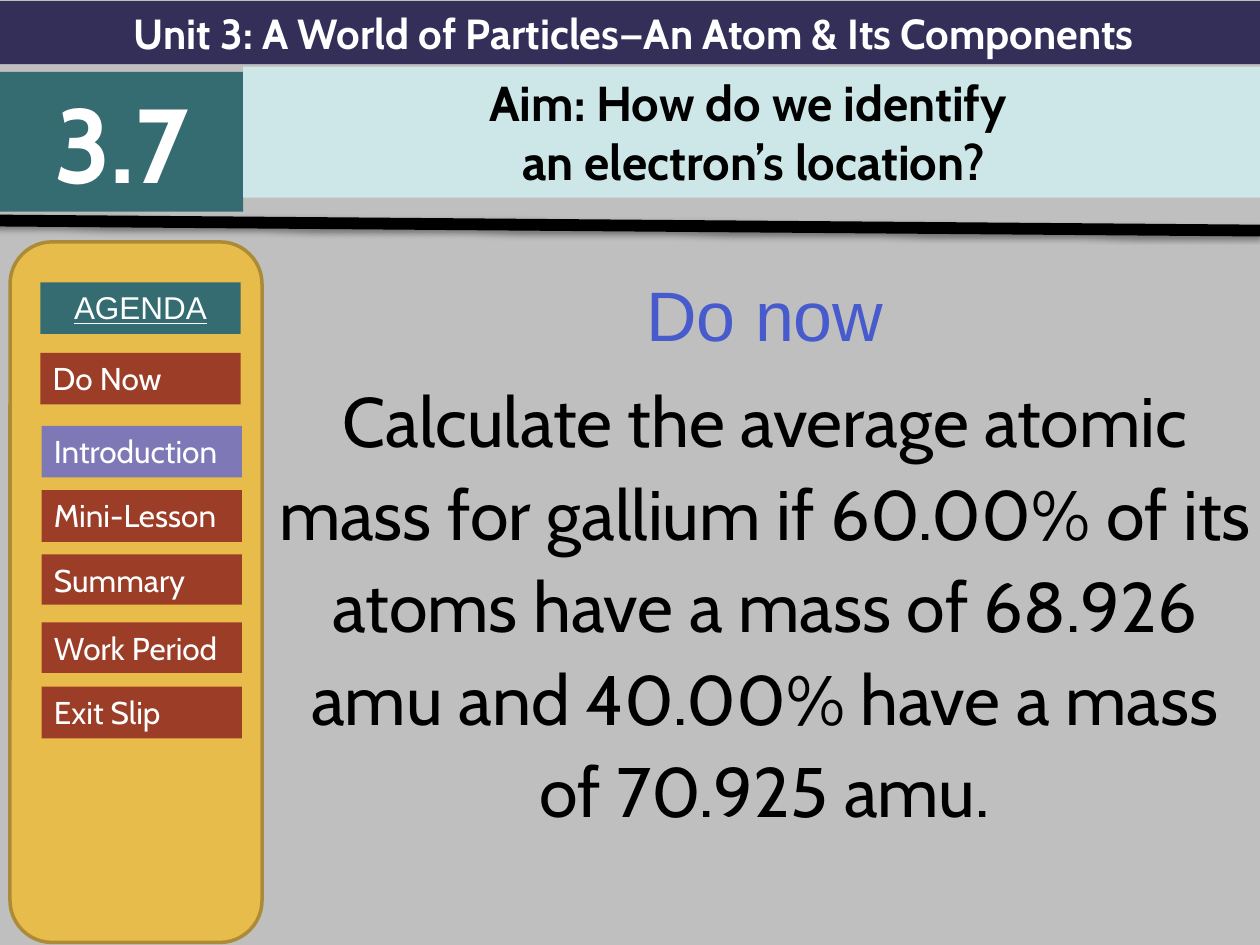
from dataclasses import dataclass
from typing import Any

import pptx
import pptx.dml.color
import pptx.enum.shapes
import pptx.enum.text
import pptx.oxml
import pptx.oxml.ns
import pptx.util

Inches = pptx.util.Inches
Shapes = pptx.enum.shapes.MSO_SHAPE
Align = pptx.enum.text.PP_ALIGN


@dataclass(frozen=True)
class Theme:
    background: str = "BFBFBF"
    navy: str = "342F59"
    teal: str = "346C71"
    pale: str = "CDE6E8"
    gold: str = "E8BC4A"
    gold_edge: str = "AC8B37"
    rust: str = "9C3D28"
    lilac: str = "7E78B7"
    blue: str = "475BCD"
    black: str = "000000"
    white: str = "FFFFFF"
    body_font: str = "Cabin"
    plain_font: str = "Arial"
    agenda_size: float = 18
    unit_size: float = 24
    aim_size: float = 28
    body_size: float = 40
    lesson_size: float = 60


THEME = Theme()


@dataclass(frozen=True)
class TextStyle:
    size: float
    color: str = THEME.white
    font: str = THEME.body_font
    bold: bool = False
    underline: bool = False
    align: Any = Align.CENTER


@dataclass(frozen=True)
class Panel:
    text: str
    left: float
    top: float
    width: float
    height: float
    fill: str
    style: TextStyle


AGENDA_ITEM = TextStyle(THEME.agenda_size, align=Align.LEFT)
AGENDA_TITLE = TextStyle(THEME.agenda_size, font=THEME.plain_font, underline=True)


def agenda_panel(text: str, top: float, left: float = 0.33, height: float = 0.41,
                 fill: str = THEME.rust, style: TextStyle = AGENDA_ITEM) -> Panel:
    return Panel(text, left, top, 1.59, height, fill, style)


HEADER = [
    Panel("Unit 3: A World of Particles—An Atom & Its Components", 0, 0.01, 10.06, 0.5,
          THEME.navy, TextStyle(THEME.unit_size, bold=True)),
    Panel("3.7", 0, 0.57, 1.93, 1.11, THEME.teal, TextStyle(THEME.lesson_size, bold=True)),
    Panel("Aim: How do we identify \nan electron’s location?", 1.93, 0.53, 8.1, 1.04,
          THEME.pale, TextStyle(THEME.aim_size, THEME.black, bold=True)),
]
AGENDA = [
    agenda_panel("AGENDA", 2.24, left=0.32, fill=THEME.teal, style=AGENDA_TITLE),
    agenda_panel("Introduction", 3.38, fill=THEME.lilac),
    agenda_panel("Mini-Lesson", 3.89),
    agenda_panel("Summary", 4.4, height=0.4),
    agenda_panel("Work Period", 4.94, height=0.4),
    agenda_panel("Exit Slip", 5.45),
]
DO_NOW_ITEM = agenda_panel("Do Now", 2.8, left=0.32)
TASK = [
    ("Do now", TextStyle(THEME.body_size, THEME.blue, THEME.plain_font)),
    ("Calculate the average atomic mass for gallium if 60.00% of its atoms have a mass "
     "of 68.926 amu and 40.00% have a mass of 70.925 amu.",
     TextStyle(THEME.body_size, THEME.black)),
]


def rgb(color: str) -> pptx.dml.color.RGBColor:
    return pptx.dml.color.RGBColor.from_string(color)


def style_paragraph(paragraph: Any, style: TextStyle) -> None:
    paragraph.alignment = style.align
    for run in paragraph.runs:
        run.font.name = style.font
        run.font.size = pptx.util.Pt(style.size)
        run.font.bold = style.bold
        run.font.underline = style.underline
        run.font.color.rgb = rgb(style.color)


def add_panel(shapes: Any, panel: Panel) -> None:
    box = shapes.add_shape(Shapes.RECTANGLE, Inches(panel.left), Inches(panel.top),
                           Inches(panel.width), Inches(panel.height))
    box.shadow.inherit = False
    box.fill.solid()
    box.fill.fore_color.rgb = rgb(panel.fill)
    box.line.fill.background()
    frame = box.text_frame
    frame.text = panel.text
    frame.word_wrap = True
    frame.auto_size = pptx.enum.text.MSO_AUTO_SIZE.SHAPE_TO_FIT_TEXT
    frame.vertical_anchor = pptx.enum.text.MSO_ANCHOR.TOP
    for paragraph in frame.paragraphs:
        style_paragraph(paragraph, panel.style)


def add_task(shapes: Any) -> None:
    frame = shapes.add_textbox(Inches(2.08), Inches(2.04), Inches(7.98), Inches(5.46)).text_frame
    frame.word_wrap = True
    frame.text = "\n".join(text for text, _ in TASK)
    for paragraph, (_, style) in zip(frame.paragraphs, TASK):
        paragraph.line_spacing = 1.1
        paragraph.space_before = pptx.util.Pt(0.2 * style.size)
        style_paragraph(paragraph, style)


def add_divider(shapes: Any) -> None:
    divider = shapes.add_connector(pptx.enum.shapes.MSO_CONNECTOR.STRAIGHT,
                                   Inches(-0.05), Inches(1.75), Inches(10), Inches(1.83))
    divider.line.color.rgb = rgb(THEME.black)
    divider.line.width = pptx.util.Pt(6.75)
    blur, distance = pptx.util.Pt(3.1), pptx.util.Pt(1.6)
    divider._element.spPr.append(pptx.oxml.parse_xml(
        f'<a:effectLst {pptx.oxml.ns.nsdecls("a")}>'
        f'<a:outerShdw blurRad="{blur}" dist="{distance}" dir="5400000" rotWithShape="0">'
        f'<a:srgbClr val="{THEME.black}"><a:alpha val="38000"/></a:srgbClr>'
        '</a:outerShdw></a:effectLst>'))


def add_agenda(shapes: Any) -> None:
    group = shapes.add_group_shape()
    card = group.shapes.add_shape(Shapes.ROUNDED_RECTANGLE, Inches(0.08), Inches(1.92),
                                  Inches(2), Inches(5.56))
    card.shadow.inherit = False
    card.fill.solid()
    card.fill.fore_color.rgb = rgb(THEME.gold)
    card.line.color.rgb = rgb(THEME.gold_edge)
    card.line.width = pptx.util.Pt(2)
    for panel in AGENDA:
        add_panel(group.shapes, panel)


def main() -> None:
    deck = pptx.Presentation()
    deck.slide_width, deck.slide_height = Inches(10), Inches(7.5)
    slide = deck.slides.add_slide(deck.slide_layouts[6])
    slide.background.fill.solid()
    slide.background.fill.fore_color.rgb = rgb(THEME.background)
    add_task(slide.shapes)
    for panel in HEADER:
        add_panel(slide.shapes, panel)
    add_divider(slide.shapes)
    add_agenda(slide.shapes)
    add_panel(slide.shapes, DO_NOW_ITEM)
    deck.save("out.pptx")


if __name__ == "__main__":
    main()
